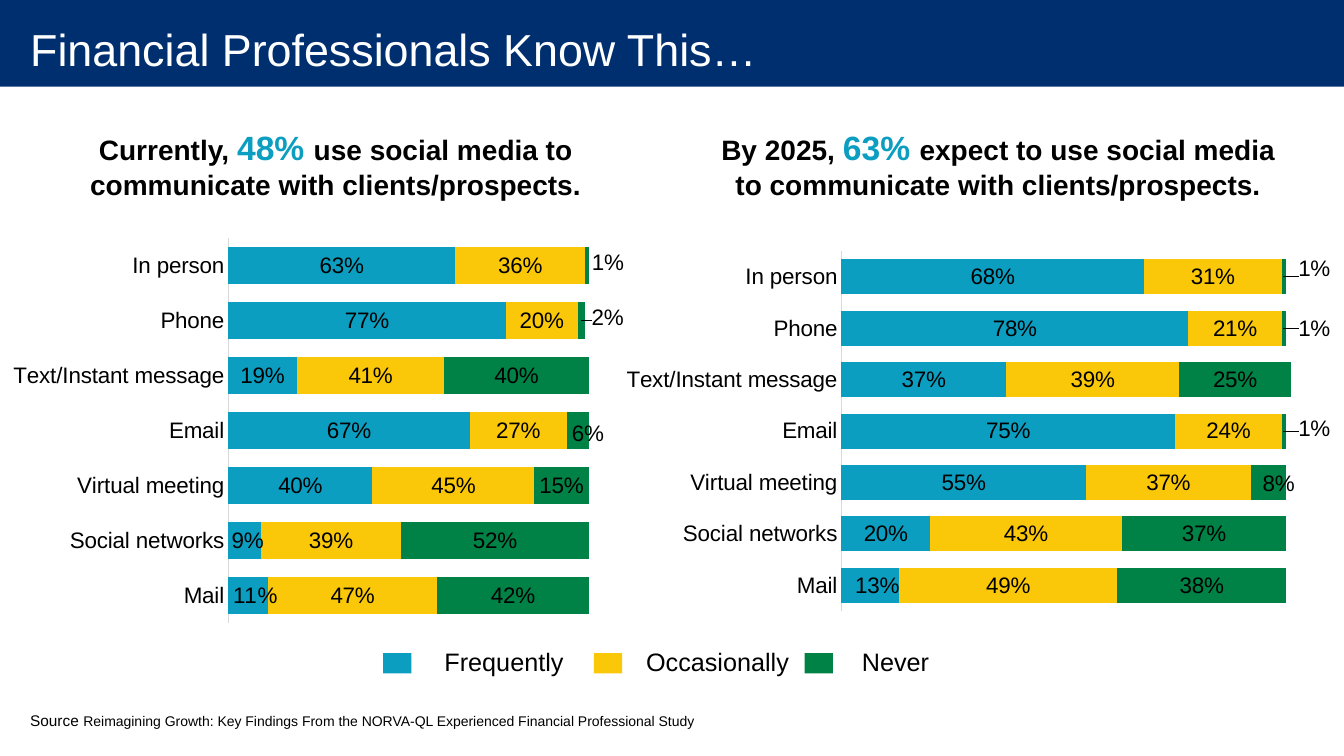
from lxml import etree
from pptx import Presentation
from pptx import util as u
from pptx.chart.data import CategoryChartData
from pptx.dml.color import RGBColor
from pptx.enum import chart as charts, shapes, text
from pptx.oxml import ns

COLORS = {"navy": "002F70", "white": "FFFFFF", "black": "000000", "axis": "D9D9D9",
          "Frequently": "0B9EC1", "Occasionally": "FAC809", "Never": "008145"}
ANSWERS = ["Frequently", "Occasionally", "Never"]
CHANNELS = ["Mail", "Social networks", "Virtual meeting", "Email",
            "Text/Instant message", "Phone", "In person"]


def rgb(name):
    return RGBColor.from_string(COLORS[name])


class SlideBuilder:
    font_name = "Arial"

    def __init__(self, slide):
        self.slide = slide

    def style(self, font, size, color="black", bold=None):
        font.name, font.size, font.bold = self.font_name, u.Pt(size), bold
        font.color.rgb = rgb(color)

    def rectangle(self, box, color):
        shape = self.slide.shapes.add_shape(
            shapes.MSO_SHAPE.RECTANGLE, *map(u.Inches, box))
        shape.shadow.inherit = False
        shape.fill.solid()
        shape.fill.fore_color.rgb = rgb(color)
        shape.line.fill.background()

    def text(self, box, runs, bold=None, align=text.PP_ALIGN.LEFT,
             anchor=text.MSO_ANCHOR.TOP, insets=(0.1, 0.05, 0.1, 0.05), tabs=()):
        """Add one paragraph; runs holds (words, size, color) tuples."""
        frame = self.slide.shapes.add_textbox(*map(u.Inches, box)).text_frame
        frame.word_wrap = True
        frame.vertical_anchor = anchor
        (frame.margin_left, frame.margin_top,
         frame.margin_right, frame.margin_bottom) = map(u.Inches, insets)
        paragraph = frame.paragraphs[0]
        paragraph.alignment = align
        if tabs:
            tab_list = etree.SubElement(paragraph._p.get_or_add_pPr(), ns.qn("a:tabLst"))
            for stop in tabs:
                etree.SubElement(tab_list, ns.qn("a:tab"),
                                 pos=str(u.Inches(stop)), algn="l")
        for words, size, color in runs:
            run = paragraph.add_run()
            run.text = words
            self.style(run.font, size, color, bold)

    def move_label(self, label, x, y):
        """Shift a data label by fractions of the chart's size."""
        self.style(label.font, 16)
        layout = etree.Element(ns.qn("c:layout"))
        manual = etree.SubElement(layout, ns.qn("c:manualLayout"))
        for tag, value in (("x", x), ("y", y)):
            etree.SubElement(manual, ns.qn("c:" + tag), val=f"{value:.4f}")
        label._get_or_add_dLbl()[0].addnext(layout)

    def place_plot(self, chart, fractions):
        plot_area = chart._chartSpace.chart.plotArea
        for old in plot_area.findall(ns.qn("c:layout")):
            plot_area.remove(old)
        layout = etree.Element(ns.qn("c:layout"))
        manual = etree.SubElement(layout, ns.qn("c:manualLayout"))
        settings = [("layoutTarget", "inner"), ("xMode", "edge"), ("yMode", "edge")]
        for tag, value in settings + list(zip("xywh", fractions)):
            etree.SubElement(manual, ns.qn("c:" + tag), val=str(value))
        plot_area.insert(0, layout)

    def stacked_bars(self, box, plot_box, values, label_shifts):
        """label_shifts maps (series, point) to a label's (x, y) shift in inches."""
        data = CategoryChartData(number_format="0%")
        data.categories = CHANNELS
        for answer, percents in zip(ANSWERS, values):
            data.add_series(answer, [percent / 100 for percent in percents])
        chart = self.slide.shapes.add_chart(
            charts.XL_CHART_TYPE.BAR_STACKED, *map(u.Inches, box), data).chart
        chart.has_legend = chart.has_title = False
        self.style(chart.font, 10)
        self.place_plot(chart, plot_box)

        category_axis, value_axis = chart.category_axis, chart.value_axis
        category_axis.major_tick_mark = charts.XL_TICK_MARK.NONE
        category_axis.format.line.color.rgb = rgb("axis")
        category_axis.format.line.width = u.Pt(0.75)
        self.style(category_axis.tick_labels.font, 16)
        value_axis.visible = value_axis.has_major_gridlines = False
        value_axis.minimum_scale, value_axis.maximum_scale = 0, 1.2

        plot = chart.plots[0]
        plot.gap_width, plot.overlap, plot.vary_by_categories = 47, 100, False
        for series in plot.series:
            series.format.fill.solid()
            series.format.fill.fore_color.rgb = rgb(series.name)
            labels = series.data_labels
            labels.show_value = True
            labels.number_format, labels.number_format_is_linked = "0%", False
            self.style(labels.font, 16)
        for (series, point), (x, y) in label_shifts.items():
            self.move_label(plot.series[series].points[point].data_label,
                            x / box[2], y / box[3])


def main():
    presentation = Presentation()
    presentation.slide_width, presentation.slide_height = u.Inches(13.33), u.Inches(7.5)
    builder = SlideBuilder(presentation.slides.add_slide(presentation.slide_layouts[6]))
    middle, center = text.MSO_ANCHOR.MIDDLE, text.PP_ALIGN.CENTER

    builder.rectangle((0, 0, 13.33, 0.86), "navy")
    builder.text((0, 0, 13.33, 0.97), [("Financial Professionals Know This…", 32, "white")],
                 anchor=middle, insets=(0.3, 0, 0.2, 0))
    study = ("Reimagining Growth: Key Findings From the NORVA-QL "
             "Experienced Financial Professional Study")
    builder.text((0.2, 7, 7.5, 0.3), [("Source ", 11, "black"), (study, 10, "black")],
                 anchor=middle)

    builder.stacked_bars(
        (0, 2.29, 6.68, 3.97), (0.339, 0.018, 0.642, 0.962),
        [(11, 9, 40, 67, 19, 77, 63), (47, 39, 45, 27, 41, 20, 36),
         (42, 52, 15, 6, 40, 2, 1)],
        {(0, 0): (0.07, 0), (0, 1): (0.03, 0), (2, 3): (0.1, 0.03),
         (2, 5): (0.26, -0.03), (2, 6): (0.21, -0.03)})
    builder.stacked_bars(
        (4.8, 1.68, 8.84, 5.83), (0.401, 0.139, 0.599, 0.613),
        [(13, 20, 55, 75, 37, 78, 68), (49, 43, 37, 24, 39, 21, 31),
         (38, 37, 8, 1, 25, 1, 1)],
        {(0, 0): (0.07, 0), (2, 2): (0.1, 0.01), (2, 3): (0.3, -0.02),
         (2, 5): (0.3, 0), (2, 6): (0.3, -0.08)})

    headings = [
        ((0.31, 1.21, 6.04, 0.84), "Currently, ", "48% ",
         "use social media to communicate with clients/prospects."),
        ((6.99, 1.21, 5.82, 0.84), "By 2025, ", "63% ",
         "expect to use social media to communicate with clients/prospects.")]
    for box, opening, share, rest in headings:
        builder.text(box, [(opening, 20, "black"), (share, 24, "Frequently"),
                           (rest, 20, "black")], bold=True, align=center)

    builder.text((4.31, 6.36, 6.49, 0.4), [("\t".join(ANSWERS), 18, "black")],
                 tabs=(2, 4.14))
    for index, answer in enumerate(ANSWERS):
        builder.rectangle((3.8 + 2.09 * index, 6.48, 0.28, 0.2), answer)

    presentation.save("out.pptx")


if __name__ == "__main__":
    main()
